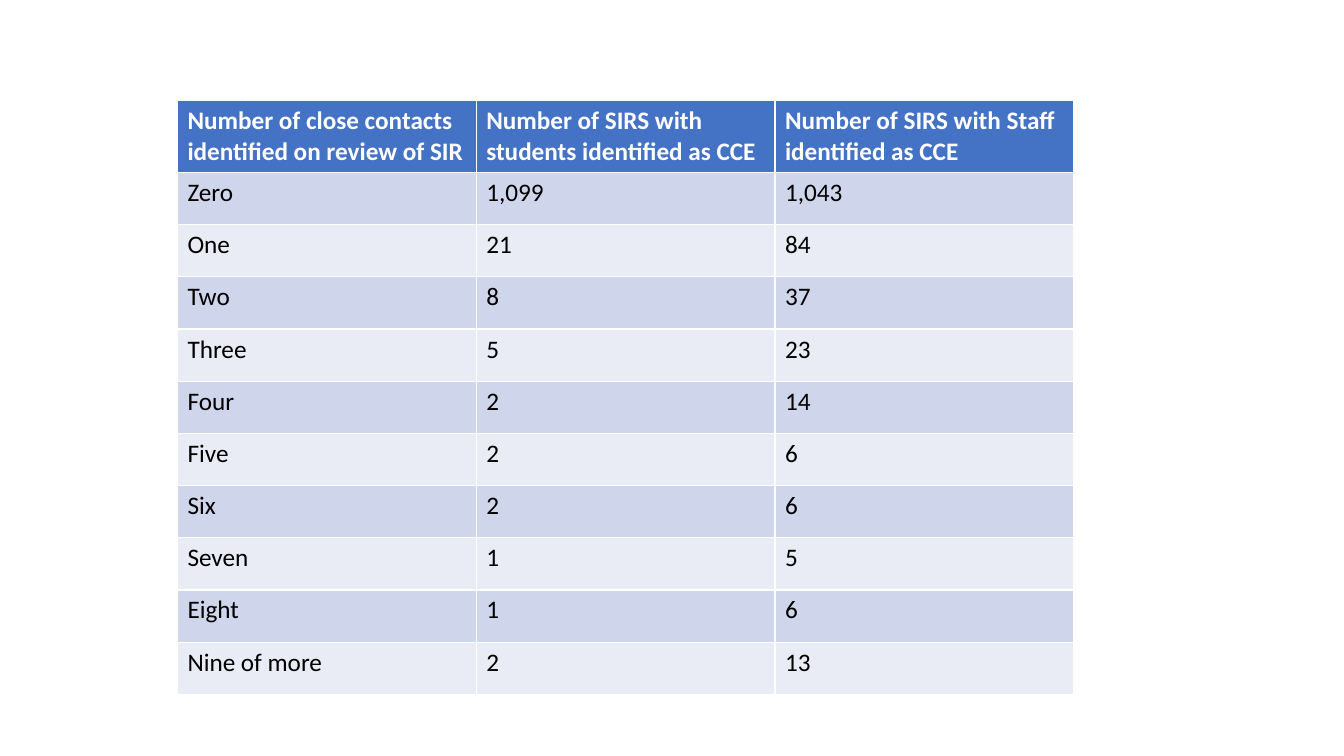
"""Build a slide with a table of close contacts found on review of SIRs."""
from pptx import Presentation
from pptx.dml.color import RGBColor
from pptx.util import Inches, Pt

HEADINGS = (
    "Number of close contacts identified on review of SIR",
    "Number of SIRS with students identified as CCE",
    "Number of SIRS with Staff identified as CCE",
)
COUNTS = [
    ("Zero", "1,099", "1,043"),
    ("One", "21", "84"),
    ("Two", "8", "37"),
    ("Three", "5", "23"),
    ("Four", "2", "14"),
    ("Five", "2", "6"),
    ("Six", "2", "6"),
    ("Seven", "1", "5"),
    ("Eight", "1", "6"),
    ("Nine of more", "2", "13"),
]
SLIDE_WIDTH, SLIDE_HEIGHT = 13.33, 7.5
LEFT, TOP, WIDTH, HEIGHT = 1.76, 1, 8.89, 5.89
HEADER_HEIGHT = 0.71
HEADER_FILL, BAND_FILLS = "4472C4", ("CFD5EA", "E9EBF5")
HEADER_INK, BODY_INK = "FFFFFF", "000000"
FONT, TEXT_SIZE = "Calibri", 18


def color(value):
    return RGBColor.from_string(value)


def fill_cell(cell, text, fill, ink, bold):
    cell.fill.solid()
    cell.fill.fore_color.rgb = color(fill)
    para = cell.text_frame.paragraphs[0]
    para.text = text
    font = para.runs[0].font
    font.name, font.size, font.bold = FONT, Pt(TEXT_SIZE), bold
    font.color.rgb = color(ink)


def add_contact_table(page):
    rows = [HEADINGS, *COUNTS]
    frame = page.shapes.add_table(
        len(rows), len(HEADINGS),
        Inches(LEFT), Inches(TOP), Inches(WIDTH), Inches(HEIGHT),
    )
    table = frame.table
    body_height = (HEIGHT - HEADER_HEIGHT) / len(COUNTS)
    for index, texts in enumerate(rows):
        header = index == 0
        table.rows[index].height = Inches(HEADER_HEIGHT if header else body_height)
        fill = HEADER_FILL if header else BAND_FILLS[(index - 1) % 2]
        ink = HEADER_INK if header else BODY_INK
        for column, text in enumerate(texts):
            fill_cell(table.cell(index, column), text, fill, ink, header)


def main():
    deck = Presentation()
    deck.slide_width, deck.slide_height = Inches(SLIDE_WIDTH), Inches(SLIDE_HEIGHT)
    blank_layout = deck.slide_layouts[6]
    add_contact_table(deck.slides.add_slide(blank_layout))
    deck.save("out.pptx")


if __name__ == "__main__":
    main()
